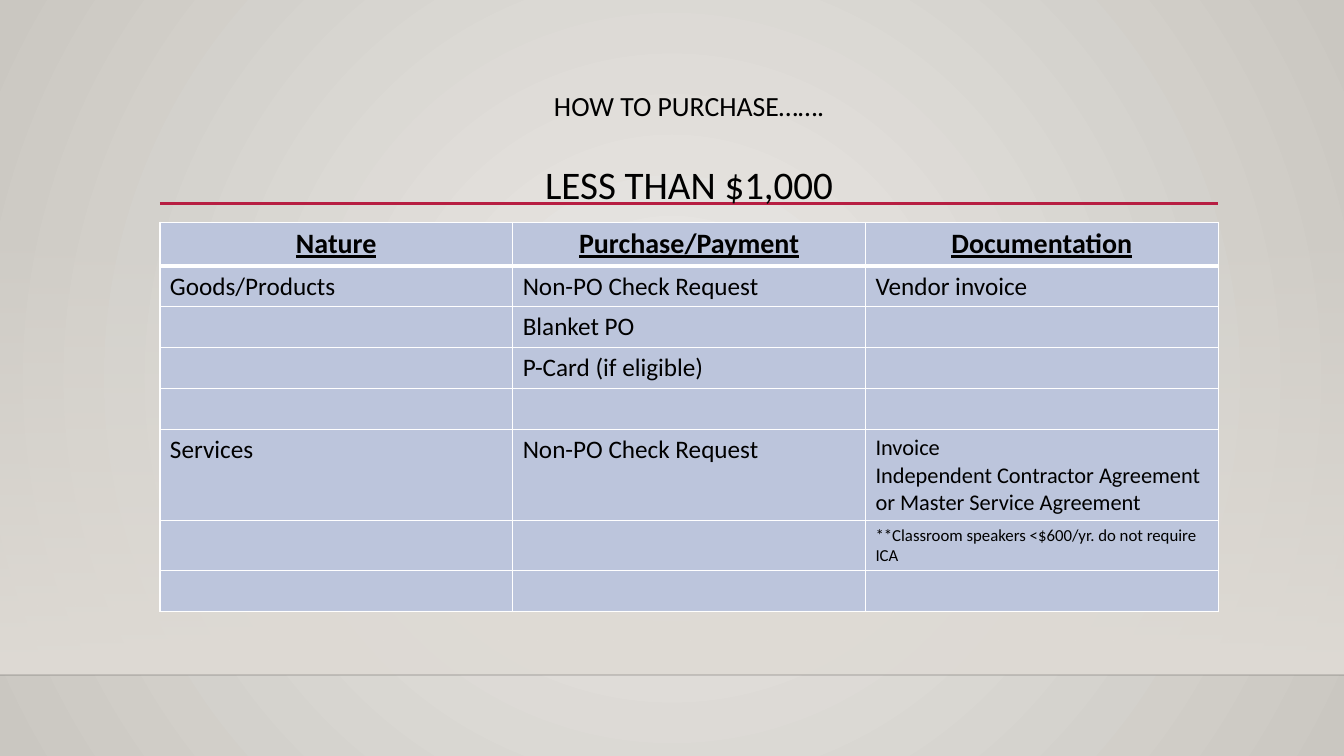
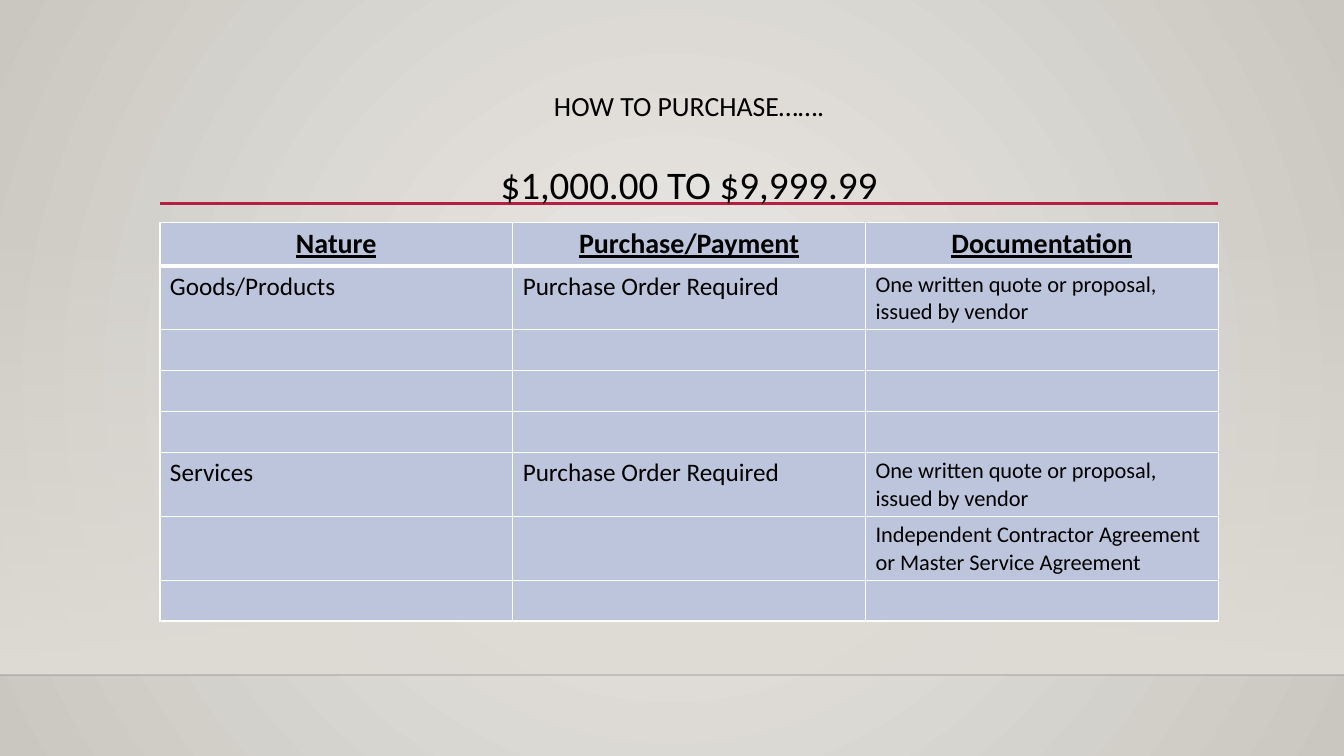
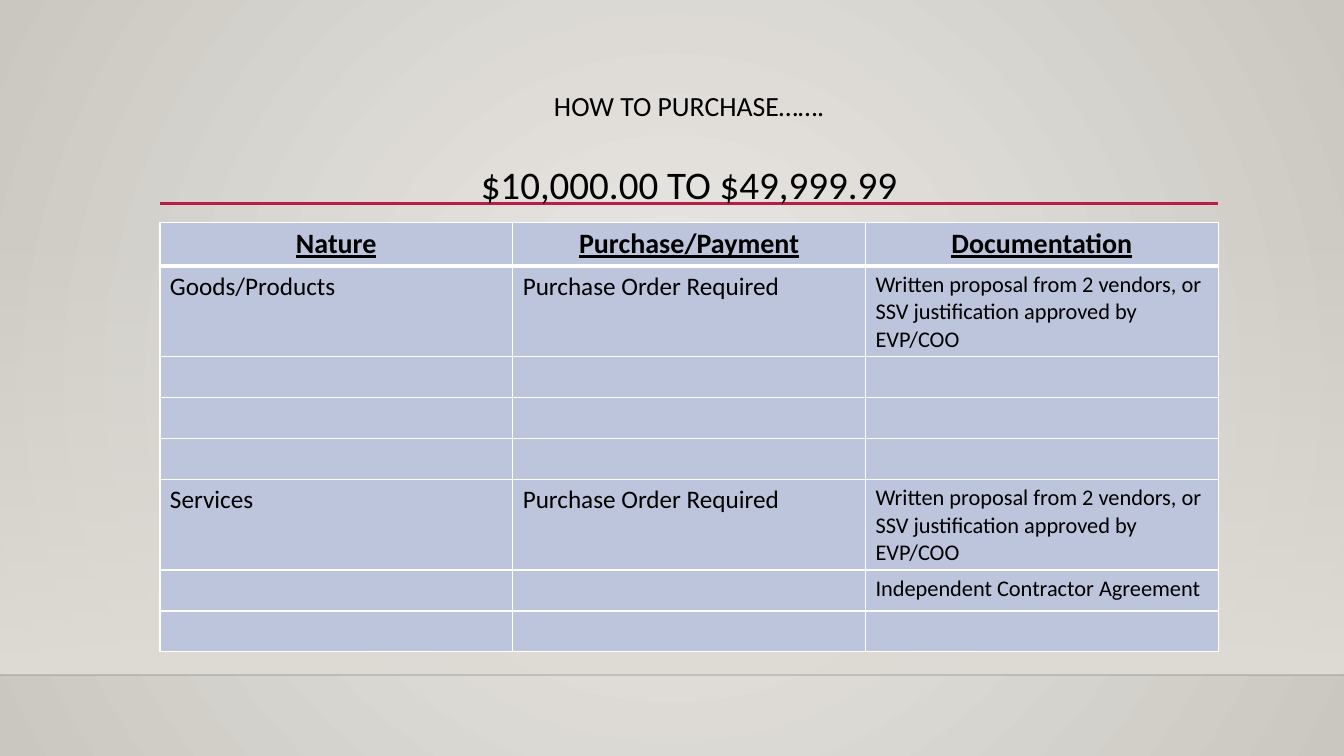
from lxml import etree
from pptx import Presentation
from pptx.dml.color import RGBColor
from pptx.enum import shapes, text
from pptx.oxml import ns
from pptx.util import Cm, Pt

COLORS = {
    "glow": "ECEAE7",
    "edge": "CAC7C1",
    "wall": "DFDBD5",
    "floor": "000001",
    "accent": "B71E42",
    "cell": "BCC5DC",
    "border": "FFFFFF",
    "ink": "000000",
}
FONT = "Calibri"
WIDTH, HEIGHT = 33.87, 19.05
LEFT, CONTENT_WIDTH = 4.03, 26.67
FLOOR_TOP = 17.01
ROW_HEIGHT = 1.03
HEADINGS = ["Nature", "Purchase/Payment", "Documentation"]

QUOTE = "One written quote or proposal, issued by vendor"
PROPOSAL = "Written proposal from 2 vendors, or SSV justification approved by EVP/COO"
CONTRACTOR = "Independent Contractor Agreement"
AGREEMENT = CONTRACTOR + " or Master Service Agreement"
CHECK = "Non-PO Check Request"
ORDER = "Purchase Order Required"
EMPTY = ["", "", ""]

PURCHASES = [
    ("LESS THAN $1,000", [
        ["Goods/Products", CHECK, "Vendor invoice"],
        ["", "Blanket PO", ""],
        ["", "P-Card (if eligible)", ""],
        EMPTY,
        ["Services", CHECK, ("Invoice\n" + AGREEMENT, 16)],
        ["", "", ("**Classroom speakers <$600/yr. do not require ICA", 12)],
        EMPTY,
    ]),
    ("$1,000.00 TO $9,999.99", [
        ["Goods/Products", ORDER, (QUOTE, 16)],
        EMPTY,
        EMPTY,
        EMPTY,
        ["Services", ORDER, (QUOTE, 16)],
        ["", "", (AGREEMENT, 16)],
        EMPTY,
    ]),
    ("$10,000.00 TO $49,999.99", [
        ["Goods/Products", ORDER, (PROPOSAL, 16)],
        EMPTY,
        EMPTY,
        EMPTY,
        ["Services", ORDER, (PROPOSAL, 16)],
        ["", "", (CONTRACTOR, 16)],
        EMPTY,
    ]),
]


def rgb(name):
    return RGBColor.from_string(COLORS[name])


def add_child(parent, tag, **attributes):
    return etree.SubElement(parent, ns.qn(tag), **attributes)


def set_alpha(color, percent):
    add_child(color, "a:alpha", val=str(percent * 1000))


def set_gradient(fill, start, end):
    fill.gradient()
    for stop, name in zip(fill.gradient_stops, (start, end)):
        stop.color.rgb = rgb(name)


def write(paragraph, content, size=18, bold=False, underline=False,
          align=None, spacing=None, before=None):
    paragraph.alignment = align
    paragraph.line_spacing = spacing
    if before is not None:
        paragraph.space_before = Pt(before)
    run = paragraph.add_run()
    run.text = content
    run.font.name = FONT
    run.font.size = Pt(size)
    run.font.bold = bold
    run.font.underline = underline
    run.font.color.rgb = rgb("ink")


def set_background(master):
    set_gradient(master.background.fill, "glow", "edge")
    gradient = master.element.xpath("./p:cSld/p:bg//a:gradFill")[0]
    for linear in gradient.findall(ns.qn("a:lin")):
        gradient.remove(linear)
    circle = add_child(gradient, "a:path", path="circle")
    add_child(circle, "a:fillToRect", l="50000", t="50000", r="50000", b="50000")


def add_rule(slide, left, top, width, color, weight):
    rule = slide.shapes.add_connector(
        shapes.MSO_CONNECTOR.STRAIGHT, Cm(left), Cm(top), Cm(left + width), Cm(top))
    rule.line.color.rgb = rgb(color)
    rule.line.width = Pt(weight)
    add_child(rule.element.spPr, "a:effectLst")
    return rule


def add_backdrop(slide, top, bottom):
    wall = slide.shapes.add_shape(
        shapes.MSO_SHAPE.RECTANGLE, 0, Cm(top), Cm(WIDTH), Cm(bottom - top))
    wall.shadow.inherit = False
    wall.line.fill.background()
    set_gradient(wall.fill, "wall", "wall")
    wall.fill.gradient_angle = 270
    set_alpha(wall.element.xpath(".//a:gs/a:srgbClr")[0], 0)
    floor_edge = add_rule(slide, 0, bottom, WIDTH, "floor", 1)
    set_alpha(floor_edge.element.xpath(".//a:ln//a:srgbClr")[0], 20)


def add_title(slide, amount, left, top, width, height):
    add_rule(slide, left, top + height, width, "accent", 2.5)
    frame = slide.shapes.add_textbox(Cm(left), Cm(top), Cm(width), Cm(height)).text_frame
    frame.word_wrap = True
    frame.vertical_anchor = text.MSO_ANCHOR.TOP
    centered = dict(align=text.PP_ALIGN.CENTER, spacing=0.9)
    write(frame.paragraphs[0], "HOW TO PURCHASE…….", size=19.8, **centered)
    write(frame.add_paragraph(), amount, size=27.9, before=30.7, **centered)


def format_cell(cell, top=1, bottom=1):
    properties = cell._tc.get_or_add_tcPr()
    for side, weight in (("L", 1), ("R", 1), ("T", top), ("B", bottom)):
        line = add_child(properties, "a:ln" + side, w=str(Pt(weight)))
        add_child(add_child(line, "a:solidFill"), "a:srgbClr", val=COLORS["border"])
    cell.fill.solid()
    cell.fill.fore_color.rgb = rgb("cell")


def add_purchase_table(slide, rows, left, top, width):
    row_count = len(rows) + 1
    table = slide.shapes.add_table(
        row_count, len(HEADINGS), Cm(left), Cm(top), Cm(width),
        Cm(ROW_HEIGHT * row_count)).table
    table.first_row = False
    table.horz_banding = False
    for column in table.columns:
        column.width = Cm(width / len(HEADINGS))
    for row in table.rows:
        row.height = Cm(ROW_HEIGHT)
    for index, heading in enumerate(HEADINGS):
        cell = table.cell(0, index)
        format_cell(cell, bottom=3)
        write(cell.text_frame.paragraphs[0], heading, size=20, bold=True,
              underline=True, align=text.PP_ALIGN.CENTER)
    for row_index, row in enumerate(rows, 1):
        for column_index, entry in enumerate(row):
            cell = table.cell(row_index, column_index)
            format_cell(cell, top=3 if row_index == 1 else 1)
            content, size = entry if isinstance(entry, tuple) else (entry, 18)
            if not content:
                continue
            frame = cell.text_frame
            for line_index, line in enumerate(content.split("\n")):
                paragraph = frame.add_paragraph() if line_index else frame.paragraphs[0]
                write(paragraph, line, size=size)


def add_purchase_slide(deck, amount, rows):
    slide = deck.slides.add_slide(deck.slide_layouts[6])
    add_backdrop(slide, 5.6, FLOOR_TOP)
    add_title(slide, amount, LEFT, 2.22, CONTENT_WIDTH, 2.91)
    add_purchase_table(slide, rows, LEFT, 5.6, CONTENT_WIDTH)


def main():
    deck = Presentation()
    deck.slide_width = Cm(WIDTH)
    deck.slide_height = Cm(HEIGHT)
    set_background(deck.slide_master)
    for amount, rows in PURCHASES:
        add_purchase_slide(deck, amount, rows)
    deck.save("out.pptx")


if __name__ == "__main__":
    main()
